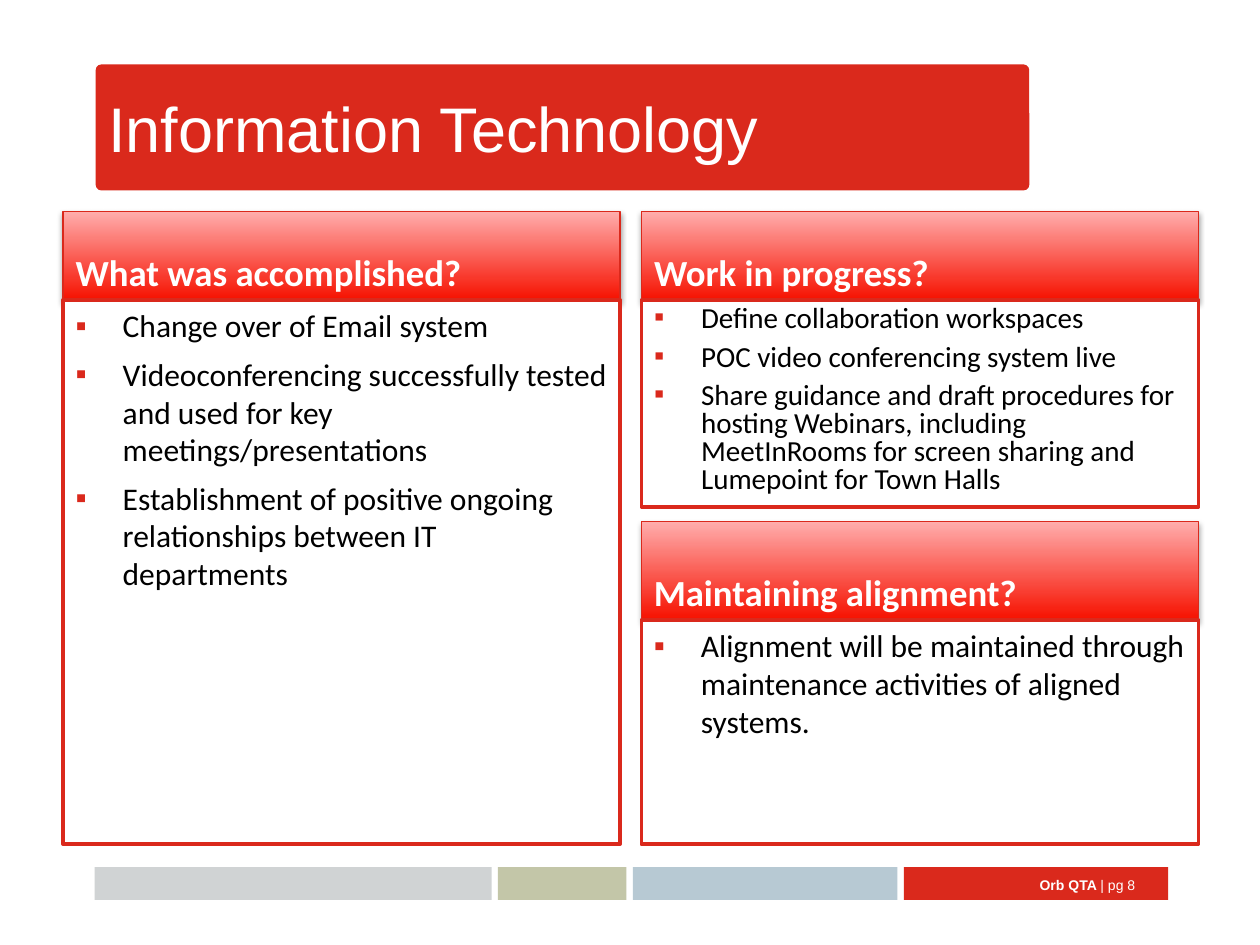
from dataclasses import dataclass

from lxml.etree import SubElement
from pptx import Presentation
from pptx.dml.color import RGBColor as Rgb
from pptx.enum.shapes import MSO_SHAPE as Kind
from pptx.enum.text import MSO_ANCHOR as Anchor, MSO_AUTO_SIZE as Fit, PP_ALIGN as Align
from pptx.oxml.ns import qn
from pptx.util import Cm, Pt


@dataclass(frozen=True)
class Theme:
    red: str = "DA291C"
    deep: str = "F61100"
    pale: str = "FFADAC"
    white: str = "FFFFFF"
    black: str = "000000"
    gray: str = "D0D3D4"
    olive: str = "C3C6A8"
    blue: str = "B7C9D3"
    sans: str = "Arial"
    text: str = "Calibri"
    title: float = 36
    head: float = 21
    body: float = 18
    dense: float = 16.6
    foot: float = 8


T = Theme()


def place(shape, box):
    shape.left, shape.top, shape.width, shape.height = map(Cm, box)


def paint(shape, fill, line=None, width=0.75):
    shape.fill.solid()
    shape.fill.fore_color.rgb = Rgb.from_string(fill)
    edge(shape, line, width)


def edge(shape, line, width):
    if line:
        shape.line.color.rgb = Rgb.from_string(line)
        shape.line.width = Pt(width)
    else:
        shape.line.fill.background()
    shape.shadow.inherit = False


def write(para, text, size, color, font, bold=False):
    run = para.add_run()
    run.text = text
    run.font.name, run.font.size, run.font.bold = font, Pt(size), bold
    run.font.color.rgb = Rgb.from_string(color)


def frame(shape, anchor):
    tf = shape.text_frame
    tf.word_wrap = True
    tf.auto_size = Fit.NONE
    tf.vertical_anchor = anchor
    return tf


def block(slide, box, fill, curve=0):
    shape = slide.shapes.add_shape(Kind.ROUNDED_RECTANGLE, *map(Cm, box))
    shape.adjustments[0] = curve
    paint(shape, fill)
    return shape


def banner(slide, box, text):
    """Title placeholder on a rounded red bar."""
    bar = block(slide, box, T.red, 0.045)
    title = slide.shapes.title
    title.element.addprevious(bar.element)
    place(title, box)
    para = frame(title, Anchor.MIDDLE).paragraphs[0]
    para.alignment = Align.LEFT
    write(para, text, T.title, T.white, T.sans)


def bullet(para):
    props = para._p.get_or_add_pPr()
    props.set("marL", str(Cm(0.95)))
    props.set("indent", str(-Cm(0.95)))
    tint = SubElement(props, qn("a:buClr"))
    SubElement(tint, qn("a:srgbClr"), val=T.red)
    SubElement(props, qn("a:buFont"), typeface=T.sans)
    SubElement(props, qn("a:buChar"), char="▪")


def shade(shape):
    """Soft shadow straight below the shape."""
    list_ = shape.element.spPr.find(qn("a:effectLst"))
    drop = SubElement(list_, qn("a:outerShdw"), blurRad=str(Pt(3.1)),
                      dist=str(Pt(1.8)), dir="5400000", rotWithShape="0")
    tint = SubElement(drop, qn("a:srgbClr"), val=T.black)
    SubElement(tint, qn("a:alpha"), val="35000")


def header(shape, text):
    shape.fill.gradient()
    shape.fill.gradient_angle = 90
    for stop, color in zip(shape.fill.gradient_stops, (T.deep, T.pale)):
        stop.color.rgb = Rgb.from_string(color)
    edge(shape, T.red, 0.75)
    shade(shape)
    para = frame(shape, Anchor.BOTTOM).paragraphs[0]
    para.alignment = Align.LEFT
    para.space_before = Pt(0)
    write(para, text, T.head, T.white, T.text, True)


def items(shape, lines, size, pitch):
    paint(shape, T.white, T.red, 2)
    tf = frame(shape, Anchor.TOP)
    for i, line in enumerate(lines):
        para = tf.add_paragraph() if i else tf.paragraphs[0]
        bullet(para)
        para.alignment = Align.LEFT
        para.line_spacing = pitch
        para.space_before = Pt(6 if i else 0)
        write(para, line, size, T.black, T.text)


def panel(parts, box, cap, head, lines, size=T.body, pitch=1.0):
    """Header of height cap over a list that fills the rest of the box."""
    left, top, width, height = box
    place(parts[0], (left, top, width, cap))
    place(parts[1], (left, top + cap, width, height - cap))
    header(parts[0], head)
    items(parts[1], lines, size, pitch)


def footer(slide, box):
    left, top, _, height = box
    gap = 0.13
    for width, fill in ((8, T.gray), (2.59, T.olive), (5.33, T.blue), (5.33, T.red)):
        block(slide, (left, top, width, height), fill)
        left += width + gap
    label = slide.shapes.add_textbox(Cm(19.86), Cm(top - 0.15), Cm(3.28), Cm(1.02))
    para = frame(label, Anchor.MIDDLE).paragraphs[0]
    para.alignment = Align.RIGHT
    write(para, "Orb QTA ", T.foot, T.white, T.sans, True)
    write(para, "| pg 8", T.foot, T.white, T.sans)


def main():
    deck = Presentation()
    deck.slide_width, deck.slide_height = Cm(25.4), Cm(19.05)
    slide = deck.slides.add_slide(deck.slide_layouts.get_by_name("Comparison"))
    holds = slide.placeholders
    left, right, top, width, end = 1.27, 12.93, 4.27, 11.23, 17.02
    low = 10.52

    banner(slide, (1.93, 1.3, 18.82, 2.54), "Information Technology")
    footer(slide, (1.91, 17.48, 21.64, 0.66))
    panel((holds[1], holds[2]), (left, top, width, end - top), 1.78,
          "What was accomplished?",
          ("Change over of Email system",
           "Videoconferencing successfully tested and used for key meetings/presentations",
           "Establishment of positive ongoing relationships between IT departments"))
    panel((holds[3], holds[4]), (right, top, width, 5.95), 1.78,
          "Work in progress?",
          ("Define collaboration workspaces",
           "POC video conferencing system live",
           "Share guidance and draft procedures for hosting Webinars, including "
           "MeetInRooms for screen sharing and Lumepoint for Town Halls"),
          T.dense, 0.8)
    extra = [slide.shapes.add_shape(Kind.RECTANGLE, 0, 0, 0, 0) for _ in range(2)]
    panel(extra, (right, low, width, end - low), 1.98,
          "Maintaining alignment?",
          ("Alignment will be maintained through maintenance activities of aligned systems.",))
    deck.save("out.pptx")


if __name__ == "__main__":
    main()
